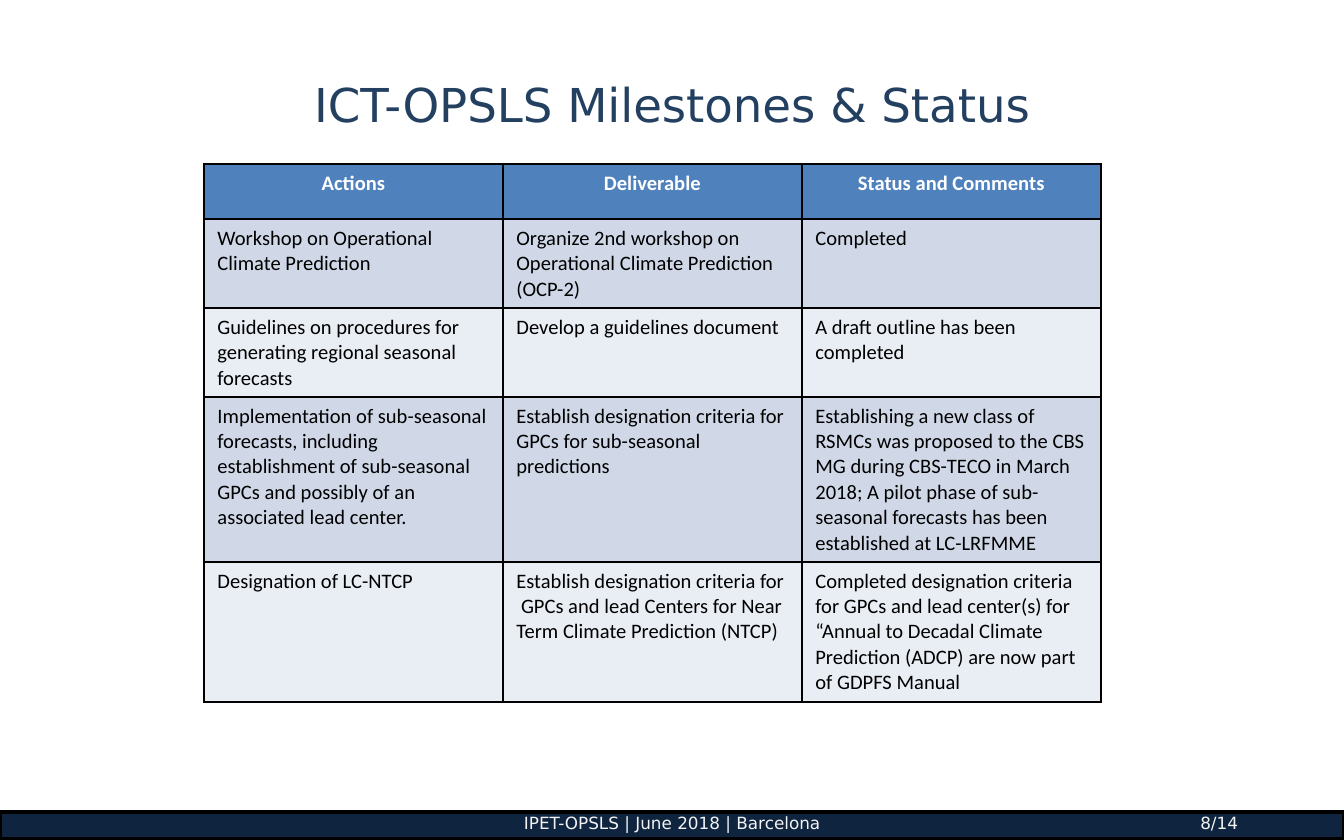
from dataclasses import dataclass
from typing import NamedTuple

from pptx import Presentation
from pptx.dml.color import RGBColor
from pptx.enum.shapes import MSO_SHAPE as Preset
from pptx.enum.text import MSO_ANCHOR as Anchor, PP_ALIGN as Align
from pptx.oxml import parse_xml
from pptx.oxml.ns import nsdecls
from pptx.util import Emu, Pt

EMU_PER_PX = 914400 / 134.4


@dataclass(frozen=True)
class Theme:
    title: str = "244061"
    header_fill: str = "4F81BD"
    header_text: str = "FFFFFF"
    band_fills: tuple[str, str] = ("D0D8E8", "E9EDF4")
    black: str = "000000"
    footer_fill: str = "0F243E"
    footer_text: str = "F2F2F2"
    display_font: str = "DejaVu Sans"
    table_font: str = "Calibri"
    title_size: int = 25
    table_size: int = 11
    footer_size: int = 9


class Box(NamedTuple):
    left: int
    top: int
    width: int
    height: int

    def emu(self) -> tuple[Emu, ...]:
        return tuple(px(length) for length in self)


class Milestone(NamedTuple):
    action: str
    deliverable: str
    status: str
    height: int


class FooterText(NamedTuple):
    text: str
    box: Box
    align: Align


THEME = Theme()
SLIDE = Box(0, 0, 1344, 840)
TITLE = Box(67, 34, 1210, 140)
FOOTER_BAR = Box(0, 812, 1344, 27)
TABLE_LEFT, TABLE_TOP, COLUMN_WIDTH = 204, 164, 299

MILESTONES = [
    Milestone("Actions", "Deliverable", "Status and Comments", 55),
    Milestone(
        "Workshop on Operational Climate Prediction",
        "Organize 2nd workshop on Operational Climate Prediction (OCP-2)",
        "Completed", 89),
    Milestone(
        "Guidelines on procedures for generating regional seasonal forecasts",
        "Develop a guidelines document",
        "A draft outline has been completed", 89),
    Milestone(
        "Implementation of sub-seasonal forecasts, including establishment of "
        "sub-seasonal GPCs and possibly of an associated lead center.",
        "Establish designation criteria for GPCs for sub-seasonal predictions",
        "Establishing a new class of RSMCs was proposed to the CBS MG during "
        "CBS-TECO in March 2018; A pilot phase of sub-seasonal forecasts has "
        "been established at LC-LRFMME", 165),
    Milestone(
        "Designation of LC-NTCP",
        "Establish designation criteria for  GPCs and lead Centers for Near "
        "Term Climate Prediction (NTCP)",
        "Completed designation criteria for GPCs and lead center(s) for "
        "“Annual to Decadal Climate Prediction (ADCP) are now part of GDPFS "
        "Manual", 140),
]

FOOTER_TEXTS = [
    FooterText("IPET-OPSLS | June 2018 | Barcelona", Box(400, 806, 544, 34), Align.CENTER),
    FooterText("8/14", Box(1138, 806, 100, 34), Align.RIGHT),
]


def px(length: int) -> Emu:
    return Emu(round(length * EMU_PER_PX))


def write_text(text_frame, text: str, *, font: str, size: int, color: str,
               bold: bool = False, align: Align = Align.LEFT) -> None:
    paragraph = text_frame.paragraphs[0]
    paragraph.alignment = align
    run = paragraph.add_run()
    run.text = text
    run.font.name = font
    run.font.size = Pt(size)
    run.font.bold = bold
    run.font.color.rgb = RGBColor.from_string(color)


def add_title(slide, text: str) -> None:
    title = slide.shapes.title
    title.left, title.top, title.width, title.height = TITLE.emu()
    title.text_frame.vertical_anchor = Anchor.MIDDLE
    write_text(title.text_frame, text, font=THEME.display_font,
               size=THEME.title_size, color=THEME.title, align=Align.CENTER)


def add_footer(slide) -> None:
    bar = slide.shapes.add_shape(Preset.RECTANGLE, *FOOTER_BAR.emu())
    bar.shadow.inherit = False
    bar.fill.solid()
    bar.fill.fore_color.rgb = RGBColor.from_string(THEME.footer_fill)
    bar.line.color.rgb = RGBColor.from_string(THEME.black)
    bar.line.width = Pt(2)
    for item in FOOTER_TEXTS:
        frame = slide.shapes.add_textbox(*item.box.emu()).text_frame
        frame.word_wrap = True
        frame.vertical_anchor = Anchor.MIDDLE
        frame.margin_left = frame.margin_right = 0
        frame.margin_top = frame.margin_bottom = 0
        write_text(frame, item.text, font=THEME.display_font,
                   size=THEME.footer_size, color=THEME.footer_text, align=item.align)


def set_borders(cell) -> None:
    """Draw a thin black line on all four sides of the cell."""
    properties = cell._tc.get_or_add_tcPr()
    for index, side in enumerate(("lnL", "lnR", "lnT", "lnB")):
        properties.insert(index, parse_xml(
            f'<a:{side} {nsdecls("a")} w="{Pt(1)}"><a:solidFill>'
            f'<a:srgbClr val="{THEME.black}"/></a:solidFill></a:{side}>'))


def add_milestone_table(slide) -> None:
    box = Box(TABLE_LEFT, TABLE_TOP, 3 * COLUMN_WIDTH,
              sum(milestone.height for milestone in MILESTONES))
    table = slide.shapes.add_table(len(MILESTONES), 3, *box.emu()).table
    for column in table.columns:
        column.width = px(COLUMN_WIDTH)
    for index, (row, milestone) in enumerate(zip(table.rows, MILESTONES)):
        row.height = px(milestone.height)
        header = index == 0
        fill = THEME.header_fill if header else THEME.band_fills[(index - 1) % 2]
        for cell, text in zip(row.cells, milestone[:3]):
            cell.fill.solid()
            cell.fill.fore_color.rgb = RGBColor.from_string(fill)
            set_borders(cell)
            write_text(cell.text_frame, text, font=THEME.table_font,
                       size=THEME.table_size, bold=header,
                       color=THEME.header_text if header else THEME.black,
                       align=Align.CENTER if header else Align.LEFT)


def main() -> None:
    presentation = Presentation()
    presentation.slide_width = px(SLIDE.width)
    presentation.slide_height = px(SLIDE.height)
    slide = presentation.slides.add_slide(presentation.slide_layouts[5])
    add_footer(slide)
    add_title(slide, "ICT-OPSLS Milestones & Status")
    add_milestone_table(slide)
    presentation.save("out.pptx")


if __name__ == "__main__":
    main()
